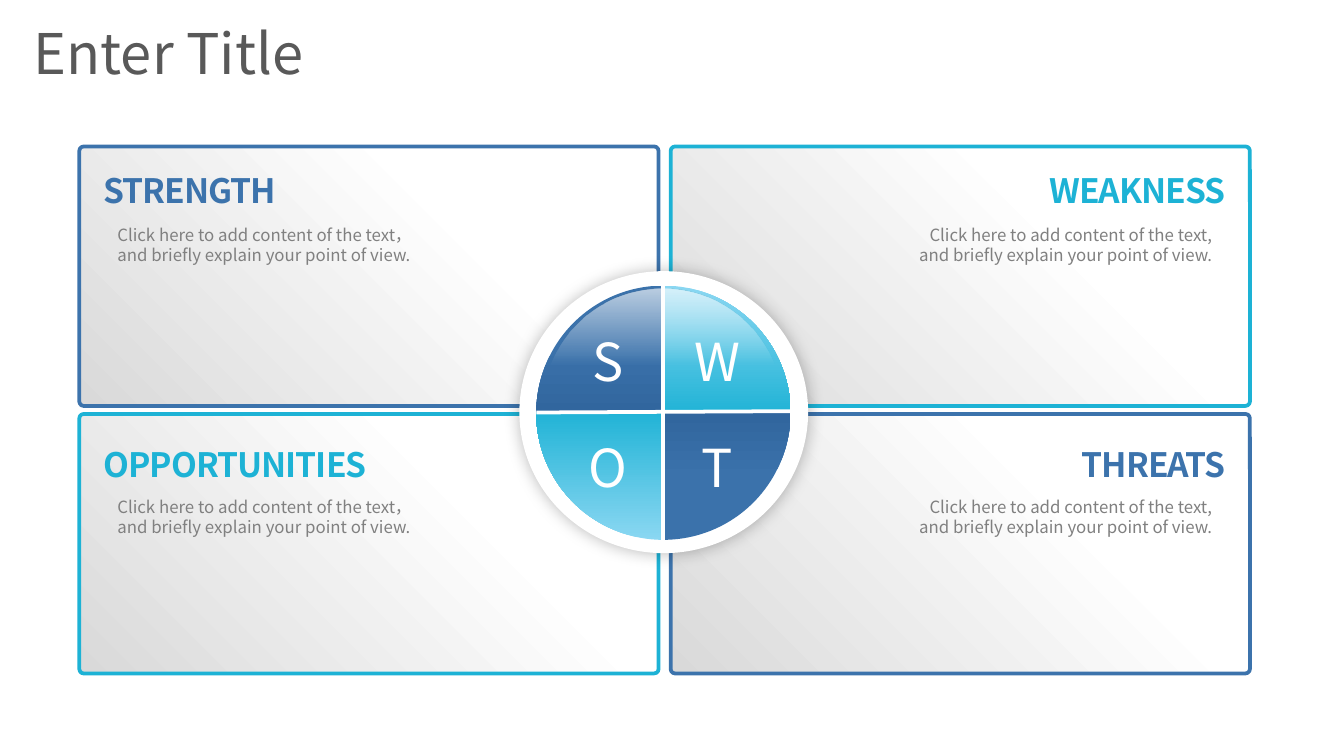
from lxml.etree import SubElement
from pptx import Presentation
from pptx.dml.color import RGBColor
from pptx.enum.shapes import MSO_CONNECTOR, MSO_SHAPE
from pptx.enum.text import MSO_ANCHOR as ANCHOR, MSO_AUTO_SIZE as AUTO, PP_ALIGN as ALIGN
from pptx.oxml.ns import qn
from pptx.util import Pt

FONT = "Noto Sans CJK JP"
BLUE, CYAN, WHITE = "3C73AC", "1DB2D5", "FFFFFF"
DARK_STOPS = [(0.24, "3B72AB"), (0.83, "22548B")]
LIGHT_STOPS = [(0, "8AD7F2"), (0.52, CYAN)]
PANEL_STOPS = [(0, "D9D9D9"), (0.68, WHITE)]
DOWN, UP, DIAGONAL = 270, 90, 45


def rgb(hex_color):
    return RGBColor.from_string(hex_color)


def points(box):
    return [Pt(value) for value in box]


def write_text(holder, text, size, color, bold=False, align=ALIGN.LEFT, anchor=ANCHOR.TOP,
               wrap=True, grow=False, line_spacing=None, tracking=None):
    """Fill a text holder; each line of the text becomes a paragraph."""
    frame = holder.text_frame
    frame.text = text
    frame.word_wrap = wrap
    frame.vertical_anchor = anchor
    frame.auto_size = AUTO.SHAPE_TO_FIT_TEXT if grow else AUTO.NONE
    for paragraph in frame.paragraphs:
        paragraph.alignment = align
        if line_spacing:
            paragraph.line_spacing = line_spacing
        for run in paragraph.runs:
            font = run.font
            font.name, font.size, font.bold = FONT, Pt(size), bold
            font.color.rgb = rgb(color)
            props = run._r.get_or_add_rPr()
            SubElement(props, qn("a:ea"), typeface=FONT)
            if tracking:
                props.set("spc", str(int(tracking * 100)))


def add_figure(shapes, preset, box, fill=None, stops=None, angle=DOWN, line=None, width=0):
    figure = shapes.add_shape(preset, *points(box))
    figure.shadow.inherit = False
    if stops:
        figure.fill.gradient()
        figure.fill.gradient_angle = angle
        for stop, (position, color) in zip(figure.fill.gradient_stops, stops):
            stop.position = position
            stop.color.rgb = rgb(color)
    else:
        figure.fill.solid()
        figure.fill.fore_color.rgb = rgb(fill)
    if line:
        figure.line.color.rgb = rgb(line)
        figure.line.width = Pt(width)
    else:
        figure.line.fill.background()
    return figure


def add_divider(shapes, start, end):
    divider = shapes.add_connector(MSO_CONNECTOR.STRAIGHT, *points(start + end))
    divider.line.color.rgb = rgb(WHITE)
    divider.line.width = Pt(2)
    SubElement(divider._element.spPr, qn("a:effectLst"))


def add_title(slide, box):
    title = slide.shapes.title
    title.left, title.top, title.width, title.height = points(box)
    write_text(title, "Enter Title", 30, "595959", anchor=ANCHOR.MIDDLE)


def add_panel(shapes, box, color):
    left, top, width, height = box
    panel = add_figure(shapes, MSO_SHAPE.ROUNDED_RECTANGLE, box, stops=PANEL_STOPS,
                       angle=DIAGONAL, line=color, width=2)
    panel.adjustments[0] = 0.017


def add_panel_text(shapes, box, heading, body, color, align, drop):
    """Place heading and body at the outer side of a panel; drop lowers the heading."""
    left, top, width, height = box

    def outer_box(inset, offset, part_width, part_height):
        x = left + inset if align == ALIGN.LEFT else left + width - inset - part_width
        return points((x, top + offset, part_width, part_height))

    heading_box = shapes.add_textbox(*outer_box(5.8, 4.3 + drop, 131.8, 40.3))
    write_text(heading_box, heading, 18, color, bold=True, align=align, anchor=ANCHOR.MIDDLE,
               wrap=False, line_spacing=0.9, tracking=-0.5)
    body_box = shapes.add_textbox(*outer_box(13.3, 38.2 + 0.75 * drop, 187.2, 28.8))
    write_text(body_box, body, 9, "808080", align=align, grow=True)


def add_wheel(shapes, box):
    left, top, width, height = box
    pie_size = 136.2
    pie_left, pie_top = left + 7.3, top + 6
    center_x, center_y = left + 75, top + 73.7

    # White disc with a soft shadow
    disc = add_figure(shapes, MSO_SHAPE.OVAL, box, fill=WHITE, line=WHITE, width=3.5)
    effects = disc._element.spPr.find(qn("a:effectLst"))
    shadow = SubElement(effects, qn("a:outerShdw"), blurRad=str(Pt(9)), dist="0", dir="0",
                        algn="ctr", rotWithShape="0")
    shade = SubElement(shadow, qn("a:srgbClr"), val="000000")
    SubElement(shade, qn("a:alpha"), val="27000")

    # Quadrants: start angle, gradient and its direction
    quadrants = [(270, LIGHT_STOPS, DOWN), (180, DARK_STOPS, DOWN),
                 (0, DARK_STOPS, UP), (90, LIGHT_STOPS, UP)]
    for start, stops, angle in quadrants:
        quadrant = add_figure(shapes, MSO_SHAPE.PIE, (pie_left, pie_top, pie_size, pie_size),
                              stops=stops, angle=angle)
        # Angles are held in 60000ths of a degree, adjustments in 100000ths
        quadrant.adjustments[0] = start * 0.6
        quadrant.adjustments[1] = (start + 90) % 360 * 0.6

    # Dividers
    add_divider(shapes, (center_x, top + 5.7), (center_x, top + 144.6))
    add_divider(shapes, (pie_left, center_y + 0.3), (pie_left + pie_size, center_y - 0.4))

    # Gloss fading to clear
    gloss = add_figure(shapes, MSO_SHAPE.OVAL, (left + 10.9, top + 7.8, 128.2, 128.2),
                       stops=[(0, WHITE), (0.32, WHITE)])
    gloss_colors = gloss._element.spPr.iter(qn("a:srgbClr"))
    for color, alpha in zip(list(gloss_colors), ("65000", "0")):
        SubElement(color, qn("a:alpha"), val=alpha)

    # Letters
    for index, letter in enumerate("SWOT"):
        row, column = divmod(index, 2)
        letter_box = shapes.add_textbox(*points((left + 20.2 + 58.3 * column,
                                                 top + 25.8 + 56.9 * row, 51.1, 41)))
        write_text(letter_box, letter, 28, WHITE, align=ALIGN.CENTER,
                   anchor=ANCHOR.MIDDLE, wrap=False)


def main():
    prs = Presentation()
    prs.slide_width, prs.slide_height = Pt(720), Pt(405)
    slide = prs.slides.add_slide(prs.slide_layouts[5])
    add_title(slide, (10.8, 2.2, 632.9, 51.8))

    wide_comma = "Click here to add content of the text，and briefly explain your point of view."
    two_lines = "Click here to add content of the text,\nand briefly explain your point of view."
    topics = [("STRENGTH", wide_comma, BLUE, ALIGN.LEFT),
              ("WEAKNESS", two_lines, CYAN, ALIGN.RIGHT),
              ("OPPORTUNITIES", wide_comma, CYAN, ALIGN.LEFT),
              ("THREATS", two_lines, BLUE, ALIGN.RIGHT)]
    boxes = [(42.5 + 316.8 * column, 78.5 + 143.3 * row, 310.3, 139)
             for row in range(2) for column in range(2)]

    # Panels, then the wheel over them, then the panel texts
    panels = slide.shapes.add_group_shape()
    for box, (heading, body, color, align) in zip(boxes, topics):
        add_panel(panels.shapes, box, color)
    wheel = slide.shapes.add_group_shape()
    add_wheel(wheel.shapes, (280, 147, 151.2, 147.6))
    for index, (box, (heading, body, color, align)) in enumerate(zip(boxes, topics)):
        add_panel_text(slide.shapes, box, heading, body, color, align, drop=3.6 * (index // 2))

    prs.save("out.pptx")


if __name__ == "__main__":
    main()
